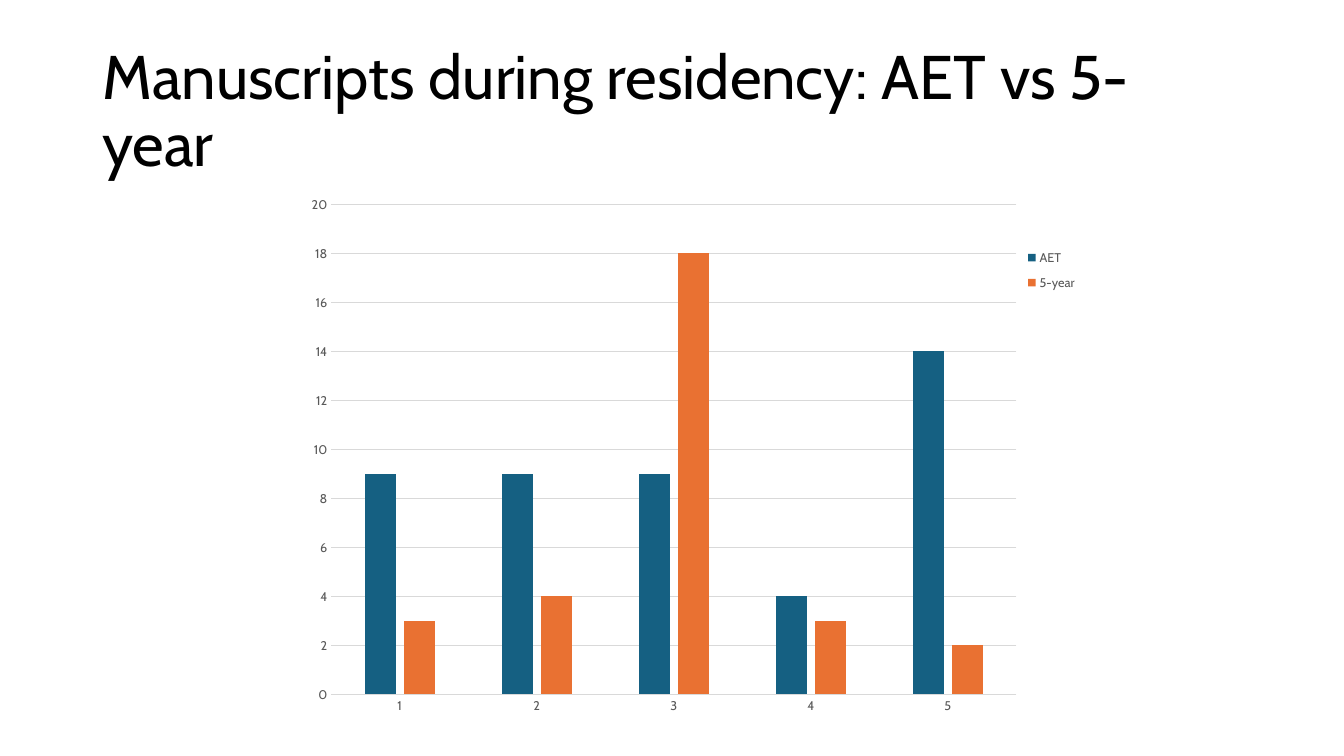
from dataclasses import dataclass

import lxml.etree
import pptx
import pptx.chart.data
import pptx.dml.color
import pptx.enum.chart
import pptx.enum.text
import pptx.oxml.ns
import pptx.util

Cm = pptx.util.Cm
Pt = pptx.util.Pt


@dataclass(frozen=True)
class Theme:
    font: str = "Cabin"
    title_size: float = 44
    chart_size: float = 10
    label_size: float = 9
    line_width: float = 0.75
    title: str = "000000"
    label: str = "595959"
    grid: str = "D9D9D9"
    aet: str = "156082"
    five_year: str = "E97132"


THEME = Theme()
YEARS = ["1", "2", "3", "4", "5"]
MANUSCRIPTS = [
    ("AET", [9, 9, 9, 4, 14], THEME.aet),
    ("5-year", [3, 4, 18, 3, 2], THEME.five_year),
]


def colour(code):
    return pptx.dml.color.RGBColor.from_string(code)


def set_values(target, values):
    for name, value in values.items():
        setattr(target, name, value)


def style_font(font, size, code):
    set_values(font, {"name": THEME.font, "size": Pt(size), "bold": False})
    font.color.rgb = colour(code)


def style_line(line):
    line.color.rgb = colour(THEME.grid)
    line.width = Pt(THEME.line_width)


def set_layout(parent, index, inner, **fractions):
    """Place a chart part by fractions of the chart's width and height."""
    tag = pptx.oxml.ns.qn
    for old in parent.findall(tag("c:layout")):
        parent.remove(old)
    layout = lxml.etree.Element(tag("c:layout"))
    parent.insert(index, layout)
    manual = lxml.etree.SubElement(layout, tag("c:manualLayout"))
    settings = {"xMode": "edge", "yMode": "edge", **fractions}
    if inner:
        settings = {"layoutTarget": "inner", **settings}
    for name, value in settings.items():
        lxml.etree.SubElement(manual, tag("c:" + name)).set("val", str(value))


def add_title(page, box, text):
    frame = page.shapes.add_textbox(*box).text_frame
    set_values(frame, {
        "word_wrap": True,
        "vertical_anchor": pptx.enum.text.MSO_ANCHOR.MIDDLE,
    })
    para = frame.paragraphs[0]
    para.line_spacing = 0.9
    span = para.add_run()
    span.text = text
    style_font(span.font, THEME.title_size, THEME.title)


def style_axes(chart):
    for axis in (chart.category_axis, chart.value_axis):
        set_values(axis, {
            "major_tick_mark": pptx.enum.chart.XL_TICK_MARK.NONE,
            "minor_tick_mark": pptx.enum.chart.XL_TICK_MARK.NONE,
        })
        style_font(axis.tick_labels.font, THEME.label_size, THEME.label)
    style_line(chart.category_axis.format.line)
    set_values(chart.value_axis, {
        "minimum_scale": 0, "maximum_scale": 20, "major_unit": 2,
        "has_major_gridlines": True,
    })
    chart.value_axis.format.line.fill.background()
    style_line(chart.value_axis.major_gridlines.format.line)


def add_legend(chart):
    chart.has_legend = True
    set_values(chart.legend, {
        "position": pptx.enum.chart.XL_LEGEND_POSITION.CORNER,
        "include_in_layout": False,
    })
    style_font(chart.legend.font, THEME.label_size, THEME.label)
    set_layout(chart.legend._element, 1, False, x=0.91, y=0.1, w=0.07, h=0.11)


def add_manuscript_chart(page, box):
    chart_data = pptx.chart.data.CategoryChartData()
    chart_data.categories = YEARS
    for name, counts, _ in MANUSCRIPTS:
        chart_data.add_series(name, counts)
    kind = pptx.enum.chart.XL_CHART_TYPE.COLUMN_CLUSTERED
    chart = page.shapes.add_chart(kind, *box, chart_data).chart
    chart.has_title = False
    style_font(chart.font, THEME.chart_size, THEME.title)
    plot = chart.plots[0]
    set_values(plot, {"gap_width": 219, "overlap": -27, "vary_by_categories": False})
    for series, (_, _, code) in zip(plot.series, MANUSCRIPTS):
        series.format.fill.solid()
        series.format.fill.fore_color.rgb = colour(code)
    style_axes(chart)
    add_legend(chart)
    plot_area = chart._chartSpace.chart.plotArea
    set_layout(plot_area, 0, True, x=0.045, y=0.033, w=0.856, h=0.909)


def main():
    deck = pptx.Presentation()
    set_values(deck, {"slide_width": Cm(33.87), "slide_height": Cm(19.05)})
    page = deck.slides.add_slide(deck.slide_layouts[6])
    add_title(page, (Cm(2.33), Cm(1.01), Cm(29), Cm(3.68)),
              "Manuscripts during residency: AET vs 5-year")
    add_manuscript_chart(page, (Cm(7.44), Cm(4.7), Cm(20.17), Cm(13.59)))
    deck.save("out.pptx")


if __name__ == "__main__":
    main()
